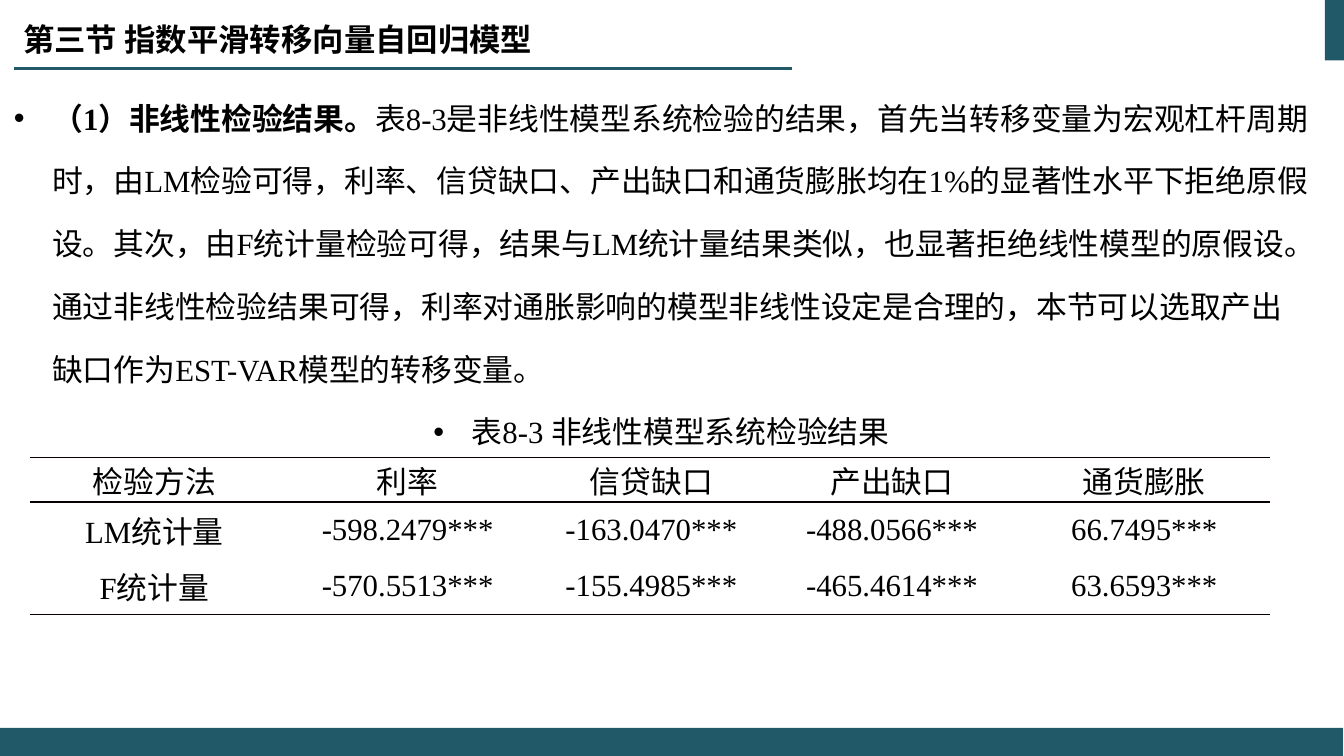
import dataclasses

import pptx
import pptx.dml.color
import pptx.enum.shapes
import pptx.enum.text
import pptx.oxml
import pptx.oxml.ns
import pptx.util

Inches = pptx.util.Inches
Pt = pptx.util.Pt
ALIGN = pptx.enum.text.PP_ALIGN
MIDDLE = pptx.enum.text.MSO_ANCHOR.MIDDLE
qn = pptx.oxml.ns.qn


@dataclasses.dataclass(frozen=True)
class Theme:
    teal: str = "215968"
    ink: str = "000000"
    rule: str = "080000"
    heading_font: str = "Noto Sans CJK SC"
    body_font: str = "Times New Roman"
    heading_size: float = 22.4
    body_size: float = 22
    line_spacing: float = 1.7


THEME = Theme()

EXPLANATION_LEAD = "（1）非线性检验结果。"
EXPLANATION = (
    "表8-3是非线性模型系统检验的结果，首先当转移变量为宏观杠杆周期时，"
    "由LM检验可得，利率、信贷缺口、产出缺口和通货膨胀均在1%的显著性水平下拒绝原假设。"
    "其次，由F统计量检验可得，结果与LM统计量结果类似，也显著拒绝线性模型的原假设。"
    "通过非线性检验结果可得，利率对通胀影响的模型非线性设定是合理的，"
    "本节可以选取产出缺口作为EST-VAR模型的转移变量。"
)
CAPTION = "表8-3 非线性模型系统检验结果"
TEST_RESULTS = [
    ["检验方法", "利率", "信贷缺口", "产出缺口", "通货膨胀"],
    ["LM统计量", "-598.2479***", "-163.0470***", "-488.0566***", "66.7495***"],
    ["F统计量", "-570.5513***", "-155.4985***", "-465.4614***", "63.6593***"],
]
COLUMN_WIDTHS = [2.46, 2.56, 2.27, 2.5, 2.5]
ROW_HEIGHTS = [0.44, 0.56, 0.56]


def rgb(value):
    return pptx.dml.color.RGBColor.from_string(value)


def xml_child(parent, tag, **attributes):
    child = parent.makeelement(qn(tag), attributes)
    parent.append(child)
    return child


def add_text(paragraph, text, *, font=THEME.body_font, size=THEME.body_size,
             bold=False, align=ALIGN.LEFT):
    paragraph.alignment = align
    run = paragraph.add_run()
    run.text = text
    run.font.size = Pt(size)
    run.font.bold = bold
    run.font.color.rgb = rgb(THEME.ink)
    run.font.name = font
    xml_child(run.font._element, "a:ea", typeface=THEME.heading_font)


def make_bullet(paragraph):
    paragraph.line_spacing = THEME.line_spacing
    properties = paragraph._p.get_or_add_pPr()
    properties.set("marL", str(Inches(0.38)))
    properties.set("indent", str(-Inches(0.38)))
    xml_child(properties, "a:buFont", typeface="Arial")
    xml_child(properties, "a:buChar", char="•")


def add_band(slide, left, top, width, height):
    band = slide.shapes.add_shape(
        pptx.enum.shapes.MSO_SHAPE.RECTANGLE,
        Inches(left), Inches(top), Inches(width), Inches(height))
    band.shadow.inherit = False
    band.fill.solid()
    band.fill.fore_color.rgb = rgb(THEME.teal)
    band.line.fill.background()


def add_frame(slide, width, height):
    add_band(slide, width - 0.19, 0, 0.19, 0.6)
    add_band(slide, 0, height - 0.28, width - 0.01, 0.28)


def add_heading(slide, left, top, width, height):
    heading = slide.shapes.title
    heading.left, heading.top = Inches(left), Inches(top)
    heading.width, heading.height = Inches(width), Inches(height)
    heading.text_frame.word_wrap = True
    heading.text_frame.vertical_anchor = MIDDLE
    add_text(heading.text_frame.paragraphs[0], "第三节 指数平滑转移向量自回归模型",
             font=THEME.heading_font, size=THEME.heading_size, bold=True)
    rule_y = Inches(top + 0.76)
    underline = slide.shapes.add_connector(
        pptx.enum.shapes.MSO_CONNECTOR.STRAIGHT,
        Inches(left + 0.01), rule_y, Inches(left + 7.73), rule_y)
    underline.line.color.rgb = rgb(THEME.teal)
    underline.line.width = Pt(1.5)
    xml_child(underline._element.spPr, "a:effectLst")


def add_explanation(slide, left, top, width, height):
    body = slide.shapes.add_textbox(
        Inches(left), Inches(top), Inches(width), Inches(height)).text_frame
    body.word_wrap = True
    explanation = body.paragraphs[0]
    make_bullet(explanation)
    add_text(explanation, EXPLANATION_LEAD, bold=True)
    add_text(explanation, EXPLANATION)
    caption = body.add_paragraph()
    make_bullet(caption)
    add_text(caption, CAPTION, align=ALIGN.CENTER)


def add_border(cell, tag, visible):
    border = xml_child(cell._tc.get_or_add_tcPr(), tag, w=str(Pt(1)))
    if visible:
        fill = xml_child(border, "a:solidFill")
        xml_child(fill, "a:srgbClr", val=THEME.rule)
    else:
        xml_child(border, "a:noFill")


def add_results(slide, left, top, width, height):
    table = slide.shapes.add_table(
        len(TEST_RESULTS), len(COLUMN_WIDTHS),
        Inches(left), Inches(top), Inches(width), Inches(height)).table
    table.first_row = False
    table.horz_banding = False
    for column, share in zip(table.columns, COLUMN_WIDTHS):
        column.width = Inches(width * share / sum(COLUMN_WIDTHS))
    for row, share in zip(table.rows, ROW_HEIGHTS):
        row.height = Inches(height * share / sum(ROW_HEIGHTS))
    last = len(TEST_RESULTS) - 1
    for r, values in enumerate(TEST_RESULTS):
        for c, value in enumerate(values):
            cell = table.cell(r, c)
            cell.margin_left = cell.margin_right = Inches(0.07)
            cell.margin_top = cell.margin_bottom = 0
            cell.vertical_anchor = MIDDLE
            add_text(cell.text_frame.paragraphs[0], value, align=ALIGN.CENTER)
            add_border(cell, "a:lnL", False)
            add_border(cell, "a:lnR", False)
            add_border(cell, "a:lnT", r < 2)
            add_border(cell, "a:lnB", r in (0, last))
            cell.fill.background()


def main():
    deck = pptx.Presentation()
    deck.slide_width, deck.slide_height = Inches(13.33), Inches(7.5)
    slide = deck.slides.add_slide(deck.slide_layouts[5])
    add_frame(slide, 13.33, 7.5)
    add_heading(slide, 0.13, -0.08, 7.15, 0.93)
    add_explanation(slide, 0.04, 0.68, 13.04, 6.5)
    add_results(slide, 0.3, 4.54, 12.3, 1.56)
    deck.save("out.pptx")


if __name__ == "__main__":
    main()
